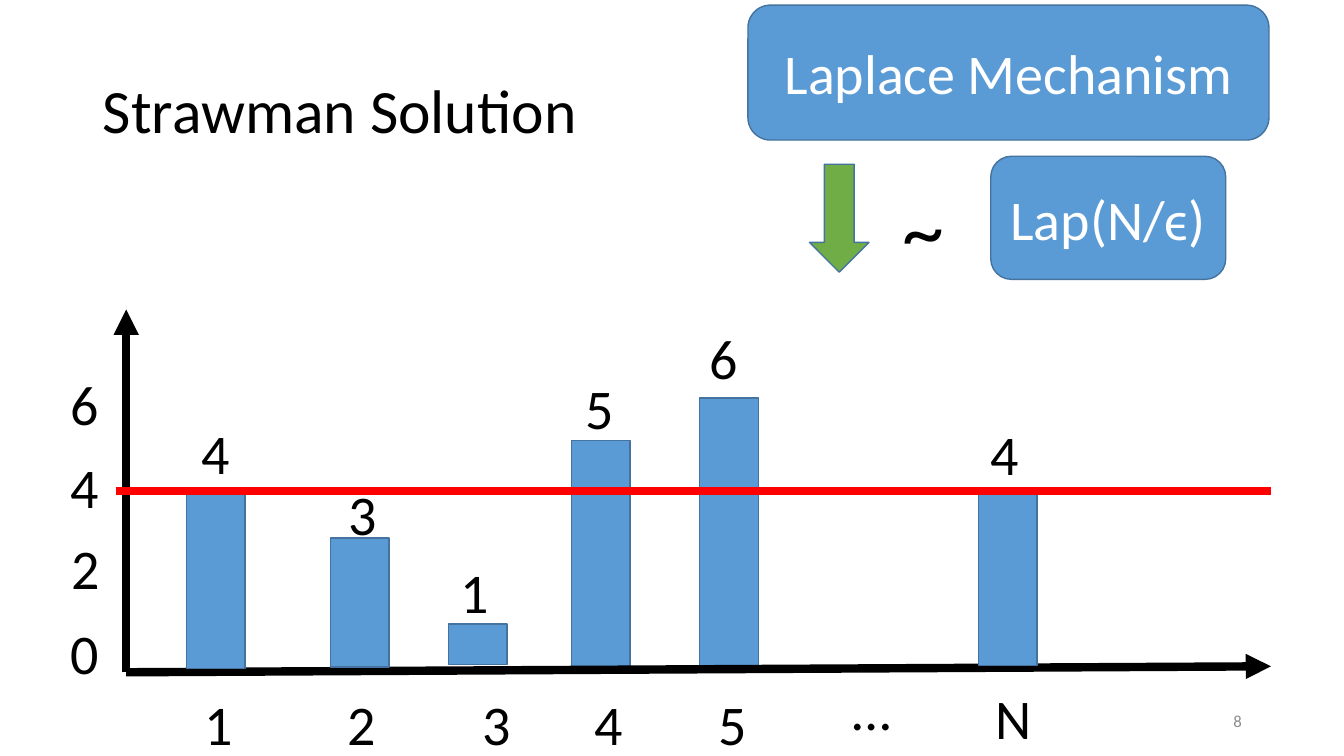
"""Builds the Strawman Solution slide with its noisy histogram."""
from lxml import etree
from pptx import Presentation
from pptx.dml.color import RGBColor
from pptx.enum.shapes import MSO_CONNECTOR, MSO_SHAPE
from pptx.enum.text import MSO_ANCHOR, MSO_AUTO_SIZE, PP_ALIGN
from pptx.oxml.ns import qn
from pptx.util import Cm, Pt

RECTANGLE = MSO_SHAPE.RECTANGLE
ROUNDED = MSO_SHAPE.ROUNDED_RECTANGLE
DOWN_ARROW = MSO_SHAPE.DOWN_ARROW
STRAIGHT = MSO_CONNECTOR.STRAIGHT
MIDDLE = MSO_ANCHOR.MIDDLE
TOP = MSO_ANCHOR.TOP
FIT_TEXT = MSO_AUTO_SIZE.SHAPE_TO_FIT_TEXT
LEFT, CENTER, RIGHT = PP_ALIGN.LEFT, PP_ALIGN.CENTER, PP_ALIGN.RIGHT

BLACK = RGBColor(0x00, 0x00, 0x00)
WHITE = RGBColor(0xFF, 0xFF, 0xFF)
BLUE = RGBColor(0x5B, 0x9B, 0xD5)
OUTLINE = RGBColor(0x43, 0x73, 0x9E)
GREEN = RGBColor(0x70, 0xAD, 0x47)
RED = RGBColor(0xFF, 0x00, 0x00)
GRAY = RGBColor(0x8C, 0x8C, 0x8C)

BAR_WIDTH = 1.48
ORIGIN = (3.18, 16.94)
AXIS_END = 32.03
THRESHOLD_Y = 12.37

BARS_BEHIND_AXIS = [(14.4, 11.1, 5.72), (17.63, 10.03, 6.76)]
BARS_ON_AXIS = [(4.7, 12.4, 4.45), (8.33, 13.56, 3.25),
                (11.3, 15.72, 1.02), (24.66, 12.45, 4.32)]
COUNTS = [("4", 4.83, 10.41), ("3", 8.53, 11.96), ("1", 11.35, 13.92),
          ("5", 14.5, 9.3), ("6", 17.63, 8.03), ("4", 24.71, 10.44)]
BINS = [("1", 4.9, 17.25), ("2", 8.51, 17.25), ("3", 11.91, 17.25),
        ("4", 14.73, 17.25), ("5", 17.86, 17.25), ("…", 21.23, 16.87),
        ("N", 24.84, 17.09)]
SCALE = [("0", 1.52, 15.47), ("2", 1.55, 13.31),
         ("4", 1.52, 11.28), ("6", 1.52, 9.19)]


class SlideBuilder:
    """Holds the style and the current slide."""

    def __init__(self, slide, font_name="Calibri", size=40):
        self.slide = slide
        self.font_name = font_name
        self.size = size

    def set_text(self, frame, text, color, size, align):
        frame.text = text
        paragraph = frame.paragraphs[0]
        paragraph.alignment = align
        paragraph.font.name = self.font_name
        paragraph.font.size = Pt(size)
        paragraph.font.color.rgb = color
        return paragraph

    def title(self, text, left, top, width, height):
        heading = self.slide.shapes.title
        heading.left, heading.top = Cm(left), Cm(top)
        heading.width, heading.height = Cm(width), Cm(height)
        heading.text_frame.vertical_anchor = MIDDLE
        paragraph = self.set_text(heading.text_frame, text, BLACK, 44, LEFT)
        paragraph.line_spacing = 0.9

    def shape(self, kind, left, top, width, height, fill=BLUE, text=""):
        block = self.slide.shapes.add_shape(
            kind, Cm(left), Cm(top), Cm(width), Cm(height))
        block.shadow.inherit = False
        block.fill.solid()
        block.fill.fore_color.rgb = fill
        block.line.color.rgb = OUTLINE
        block.line.width = Pt(1)
        if text:
            block.text_frame.word_wrap = True
            block.text_frame.vertical_anchor = MIDDLE
            self.set_text(block.text_frame, text, WHITE, self.size, CENTER)

    def bars(self, places):
        for left, top, height in places:
            self.shape(RECTANGLE, left, top, BAR_WIDTH, height)

    def label(self, text, left, top, width=1.8, height=1.96, size=None,
              color=BLACK, align=LEFT, anchor=TOP):
        box = self.slide.shapes.add_textbox(
            Cm(left), Cm(top), Cm(width), Cm(height))
        frame = box.text_frame
        frame.word_wrap = True
        frame.vertical_anchor = anchor
        if anchor == TOP:
            frame.auto_size = FIT_TEXT
        self.set_text(frame, text, color, size or self.size, align)

    def line(self, start, end, color=BLACK, arrow=False):
        stroke = self.slide.shapes.add_connector(
            STRAIGHT, *(Cm(value) for value in (*start, *end)))
        stroke.line.color.rgb = color
        stroke.line.width = Pt(6)
        properties = stroke._element.spPr
        if arrow:
            etree.SubElement(properties.find(qn("a:ln")), qn("a:tailEnd"),
                             type="triangle")
        etree.SubElement(properties, qn("a:effectLst"))


def main():
    presentation = Presentation()
    presentation.slide_width = Cm(33.87)
    presentation.slide_height = Cm(19.05)
    title_only = presentation.slide_layouts[5]
    builder = SlideBuilder(presentation.slides.add_slide(title_only))

    builder.title("Strawman Solution", 2.34, 1.02, 29.21, 3.68)

    builder.bars(BARS_BEHIND_AXIS)
    builder.line(ORIGIN, (AXIS_END, 16.79), arrow=True)
    builder.line(ORIGIN, (ORIGIN[0], 7.8), arrow=True)
    builder.bars(BARS_ON_AXIS)
    builder.line((2.92, THRESHOLD_Y), (AXIS_END, THRESHOLD_Y), RED)
    for text, left, top in COUNTS + BINS + SCALE:
        builder.label(text, left, top)

    builder.shape(ROUNDED, 18.85, 0.13, 13.13, 3.4, text="Laplace Mechanism")
    builder.shape(ROUNDED, 24.97, 3.94, 5.92, 3.1, text="Lap(N/ϵ)")
    builder.shape(DOWN_ARROW, 20.4, 4.14, 1.5, 2.72, fill=GREEN)
    builder.label("~", 22.5, 4.32, 1.73, 2.82, size=60)
    builder.label("8", 23.93, 17.65, 7.62, 1.02, size=12, color=GRAY,
                  align=RIGHT, anchor=MIDDLE)

    presentation.save("out.pptx")


if __name__ == "__main__":
    main()
